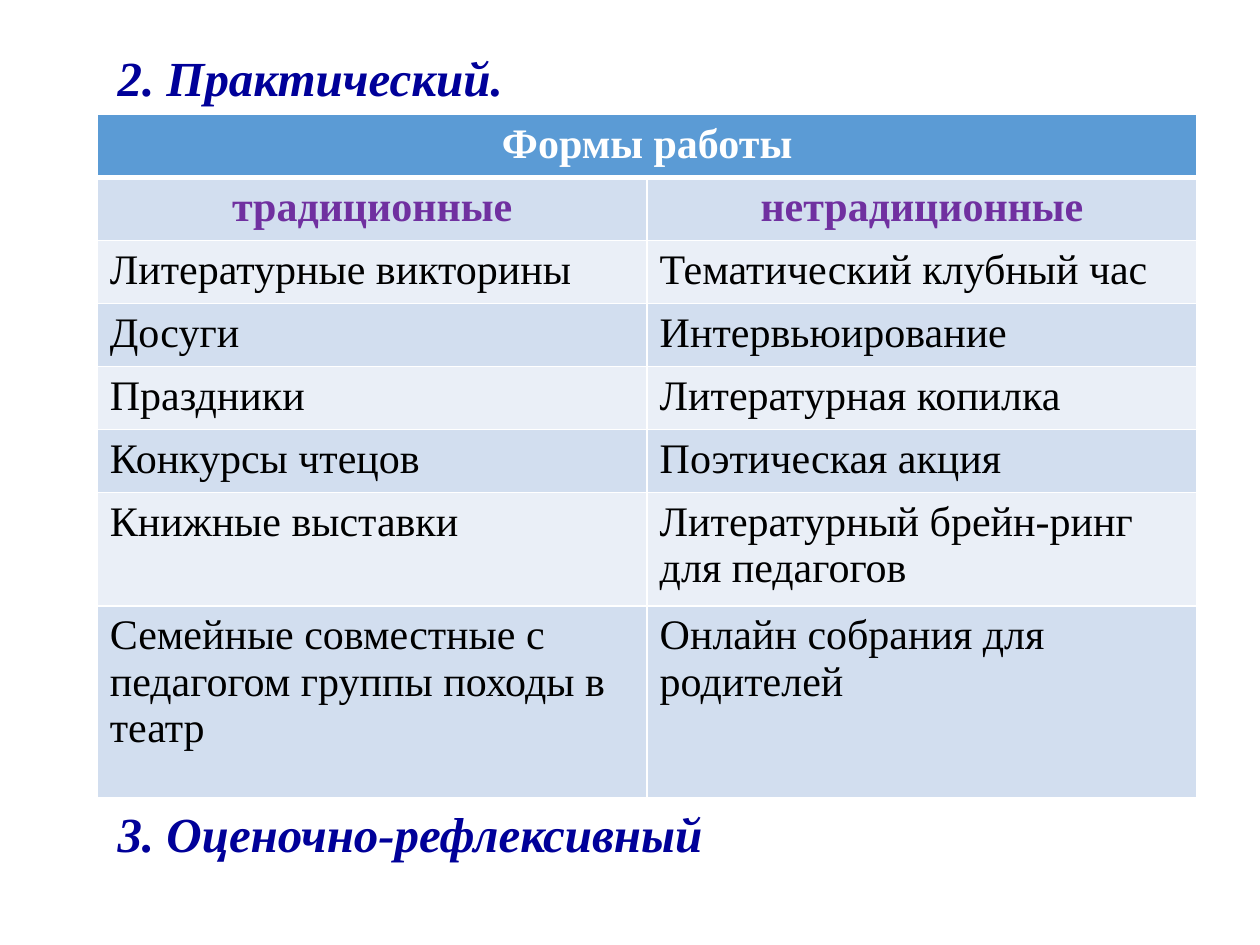
"""Build a slide with a table of traditional and non-traditional forms of work."""
import pptx
import pptx.dml.color
import pptx.enum.text
import pptx.oxml
import pptx.oxml.ns
import pptx.util
from pptx.util import Cm

RGBColor = pptx.dml.color.RGBColor
NAVY = RGBColor(0x00, 0x00, 0x99)
PURPLE = RGBColor(0x70, 0x30, 0xA0)
BLACK = RGBColor(0x00, 0x00, 0x00)
WHITE = RGBColor(0xFF, 0xFF, 0xFF)
HEADER_BLUE = RGBColor(0x5B, 0x9B, 0xD5)
BAND_DARK = RGBColor(0xD2, 0xDE, 0xEF)
BAND_LIGHT = RGBColor(0xEA, 0xEF, 0xF7)
LEFT = Cm(1.96)
ALIGN = pptx.enum.text.PP_ALIGN


def write_text(frame, text, size=24, color=BLACK, bold=False, italic=False, align=ALIGN.LEFT):
    para = frame.paragraphs[0]
    para.alignment = align
    span = para.add_run()
    span.text = text
    span.font.name = "Times New Roman"
    span.font.size = pptx.util.Pt(size)
    span.font.color.rgb = color
    span.font.bold = bold
    span.font.italic = italic


def add_border(cell, side, width):
    cell._tc.get_or_add_tcPr().append(pptx.oxml.parse_xml(
        f'<a:ln{side} {pptx.oxml.ns.nsdecls("a")} w="{pptx.util.Pt(width)}">'
        f'<a:solidFill><a:srgbClr val="{WHITE}"/></a:solidFill></a:ln{side}>'))


deck = pptx.Presentation()
deck.slide_width, deck.slide_height = Cm(25.4), Cm(19.05)
page = deck.slides.add_slide(deck.slide_layouts[5])

title = page.shapes.title
title.left, title.top, title.width, title.height = LEFT, Cm(0.84), Cm(17.91), Cm(1.45)
closing = page.shapes.add_textbox(LEFT, Cm(16.08), Cm(13.28), Cm(1.45))
headings = [(title, "2. Практический."), (closing, "3. Оценочно-рефлексивный")]
for box, text in headings:
    frame = box.text_frame
    frame.word_wrap = True
    frame.auto_size = pptx.enum.text.MSO_AUTO_SIZE.NONE
    frame.vertical_anchor = pptx.enum.text.MSO_ANCHOR.TOP
    frame.margin_left = Cm(0.41)
    write_text(frame, text, size=28, color=NAVY, bold=True, italic=True)

rows = [
    ("Формы работы", ""),
    ("традиционные", "нетрадиционные"),
    ("Литературные викторины", "Тематический клубный час"),
    ("Досуги", "Интервьюирование"),
    ("Праздники", "Литературная копилка"),
    ("Конкурсы чтецов", "Поэтическая акция"),
    ("Книжные выставки", "Литературный брейн-ринг для педагогов"),
    ("Семейные совместные с педагогом группы походы в театр",
     "Онлайн собрания для родителей"),
]
heights = [1.27] * 6 + [2.29, 3.86]
table = page.shapes.add_table(
    len(rows), 2, LEFT, Cm(2.31), Cm(22.17), Cm(sum(heights))).table
table.cell(0, 0).merge(table.cell(0, 1))

for row_index, texts in enumerate(rows):
    table.rows[row_index].height = Cm(heights[row_index])
    for column_index, text in enumerate(texts):
        cell = table.cell(row_index, column_index)
        for side in "LRTB":
            below_header = (row_index, side) in [(0, "B"), (1, "T")]
            add_border(cell, side, 3 if below_header else 1)
        cell.fill.solid()
        if row_index == 0:
            cell.fill.fore_color.rgb = HEADER_BLUE
        else:
            cell.fill.fore_color.rgb = BAND_DARK if row_index % 2 else BAND_LIGHT
        if not text:
            continue
        if row_index < 2:
            write_text(cell.text_frame, text, color=PURPLE if row_index else WHITE,
                       bold=True, align=ALIGN.CENTER)
        else:
            write_text(cell.text_frame, text)

deck.save("out.pptx")
